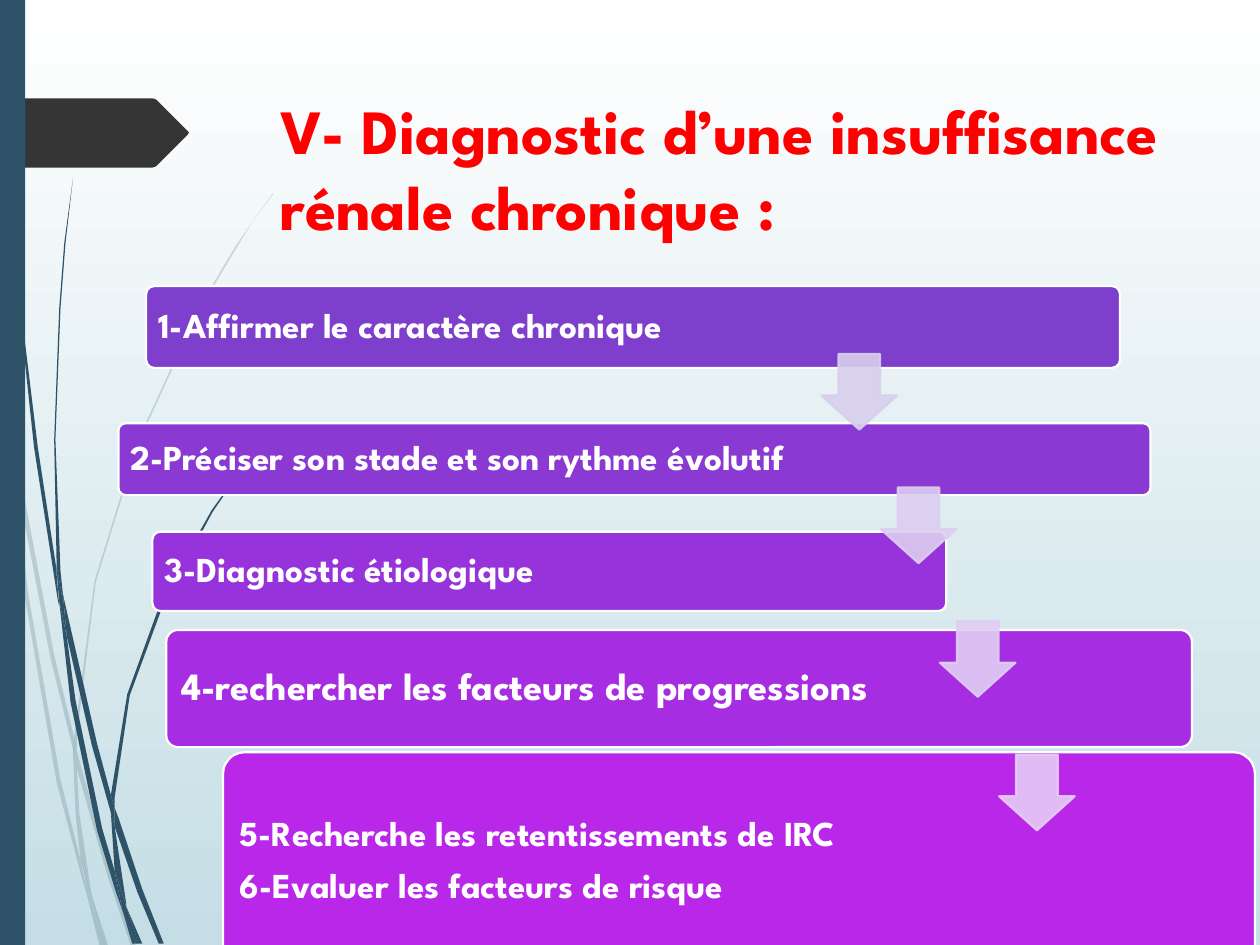
from lxml import etree
from pptx import Presentation
from pptx.dml.color import RGBColor
from pptx.enum.shapes import MSO_SHAPE
from pptx.enum.text import MSO_ANCHOR, MSO_AUTO_SIZE, PP_ALIGN
from pptx.oxml.ns import qn
from pptx.util import Inches, Pt

RECTANGLE = MSO_SHAPE.RECTANGLE
ROUNDED = MSO_SHAPE.ROUNDED_RECTANGLE
DOWN_ARROW = MSO_SHAPE.DOWN_ARROW
TOP, MIDDLE = MSO_ANCHOR.TOP, MSO_ANCHOR.MIDDLE
LEFT = PP_ALIGN.LEFT
NO_FIT = MSO_AUTO_SIZE.NONE

THEME = {
    "font": "League Spartan",
    "title": "FF0000",
    "title_size": 36,
    "text": "FFFFFF",
    "outline": "FFFFFF",
    "outline_width": 1.25,
    "accent": "2E5369",
    "tab": "353535",
    "sky": ["FFFFFF", "C5DEE5"],
    "arrows": ["D8CFEC", "DCCEF0", "E0CDF3", "E6CDF6"],
    "wisp_opacity": 20,
    "arrow_opacity": 90,
}

# Points in hundredths of an inch
PALE_WISPS = [
    [(8, 350), (6, 322), (0, 282), (0, 299), (7, 344)],
    [(40, 522), (59, 599), (59, 586), (43, 520), (10, 345), (12, 376)],
    [(64, 607), (61, 596), (61, 610), (85, 694), (104, 751), (108, 751), (88, 692)],
    [(83, 751), (86, 751), (73, 711)],
    [(64, 683), (48, 619), (22, 469), (12, 376), (8, 350), (19, 470), (45, 621),
     (64, 693), (70, 714), (69, 707)],
    [(58, 599), (60, 646), (64, 683), (67, 692), (73, 711), (72, 706), (63, 646),
     (61, 610), (61, 608)],
    [(61, 584), (76, 462), (111, 349), (159, 245), (187, 198), (201, 175), (217, 154),
     (217, 153), (201, 175), (186, 197), (158, 244), (110, 348), (75, 461), (59, 584),
     (59, 586), (61, 596)],
    [(70, 714), (79, 751), (82, 751)],
    [(61, 608), (61, 610), (61, 596), (59, 586), (58, 599)],
    [(67, 692), (65, 683), (69, 707), (70, 714), (82, 751), (83, 751), (73, 711)],
]
DARK_WISPS = [
    [(5, 110), (14, 233), (27, 355), (46, 477), (47, 481), (45, 457), (45, 453),
     (30, 355), (15, 232), (6, 109), (4, 48), (3, 0), (2, 0), (3, 48)],
    [(73, 592), (88, 645), (88, 633), (88, 631), (77, 590), (50, 472), (53, 505)],
    [(94, 649), (91, 641), (91, 656), (109, 708), (126, 749), (130, 749), (113, 706)],
    [(91, 691), (81, 657), (60, 556), (53, 505), (47, 477), (56, 557), (77, 659),
     (92, 708), (97, 722), (96, 717)],
    [(50, 472), (48, 453), (44, 349), (48, 245), (52, 193), (58, 141), (51, 193),
     (47, 245), (43, 349), (45, 449), (49, 472)],
    [(110, 749), (113, 749), (100, 719)],
    [(47, 477), (53, 505), (50, 472), (49, 472), (45, 449), (45, 453)],
    [(91, 633), (103, 552), (131, 476), (169, 406), (191, 374), (203, 359), (216, 344),
     (215, 344), (203, 358), (191, 373), (168, 405), (129, 474), (101, 551), (88, 631),
     (91, 641)],
    [(97, 722), (105, 749), (108, 749)],
    [(88, 645), (91, 691), (96, 706), (100, 719), (100, 716), (91, 656), (90, 651)],
    [(88, 645), (90, 651), (91, 656), (91, 641), (88, 631), (88, 633)],
    [(96, 706), (91, 691), (96, 717), (97, 722), (108, 749), (110, 749), (100, 719)],
]
TAB = [(149, 107), (124, 132), (121, 133), (0, 133), (0, 78), (121, 78), (124, 79),
       (149, 104), (150, 105)]
STEPS = [
    (1.16, 2.27, 7.73, 0.65, "7E40CC", 20, 0.08, ["1-Affirmer le caractère chronique"]),
    (0.94, 3.36, 8.19, 0.57, "8A3AD3", 20, 0.08, ["2-Préciser son stade et son rythme évolutif"]),
    (1.21, 4.22, 6.3, 0.63, "9733DB", 20, 0.08, ["3-Diagnostic étiologique"]),
    (1.32, 5, 8.14, 0.93, "A72DE2", 22, 0.09, ["4-rechercher les facteurs de progressions"]),
    (1.77, 5.97, 8.19, 1.73, "B927E9", 20, 0.08,
     ["5-Recherche les retentissements de IRC", "6-Evaluer les facteurs de risque"]),
]


def paint(shape, color, outline=None, opacity=100):
    shape.shadow.inherit = False
    shape.fill.solid()
    shape.fill.fore_color.rgb = RGBColor.from_string(color)
    if outline:
        shape.line.color.rgb = RGBColor.from_string(outline)
        shape.line.width = Pt(THEME["outline_width"])
    else:
        shape.line.fill.background()
    if opacity < 100:
        for tone in shape._element.spPr.iter(qn("a:srgbClr")):
            etree.SubElement(tone, qn("a:alpha"), val=str(opacity * 1000))


def write(para, text, size, color):
    para.alignment = LEFT
    span = para.add_run()
    span.text = text
    formats = {"name": THEME["font"], "size": Pt(size), "bold": True}
    for name, value in formats.items():
        setattr(span.font, name, value)
    span.font.color.rgb = RGBColor.from_string(color)


deck = Presentation()
deck.slide_width, deck.slide_height = Inches(10), Inches(7.5)
page = deck.slides.add_slide(deck.slide_layouts[5])
shapes = page.shapes

sky = page.background.fill
sky.gradient()
sky.gradient_angle = 270
for stop, color, position in zip(sky.gradient_stops, THEME["sky"], (0, 1)):
    stop.color.rgb = RGBColor.from_string(color)
    stop.position = position

outlines = [(points, THEME["accent"], THEME["wisp_opacity"]) for points in PALE_WISPS]
outlines += [(points, THEME["accent"], 100) for points in DARK_WISPS]
outlines.append((TAB, THEME["tab"], 100))
for points, color, opacity in outlines:
    builder = shapes.build_freeform(*points[0], scale=Inches(0.01))
    builder.add_line_segments(points[1:], close=True)
    paint(builder.convert_to_shape(), color, opacity=opacity)

side_band = shapes.add_shape(RECTANGLE, 0, 0, Inches(0.2), deck.slide_height)
paint(side_band, THEME["accent"])

for left, top, width, height, color, size, inset, lines in STEPS:
    bar = shapes.add_shape(ROUNDED, Inches(left), Inches(top), Inches(width), Inches(height))
    bar.adjustments[0] = 0.1
    paint(bar, color, THEME["outline"])
    frame = bar.text_frame
    frame.word_wrap = True
    frame.vertical_anchor = MIDDLE
    for side in ("left", "top", "right", "bottom"):
        setattr(frame, f"margin_{side}", Inches(inset))
    for index, line in enumerate(lines):
        para = frame.add_paragraph() if index else frame.paragraphs[0]
        para.line_spacing = 0.9
        para.space_after = Pt(8)
        write(para, line, size, THEME["text"])

for index, color in enumerate(THEME["arrows"]):
    arrow = shapes.add_shape(DOWN_ARROW, Inches(6.52 + 0.47 * index),
                             Inches(2.81 + 1.06 * index), Inches(0.6), Inches(0.6))
    arrow.adjustments[0] = 0.55
    arrow.adjustments[1] = 0.45
    paint(arrow, color, color, THEME["arrow_opacity"])

title = shapes.title
placement = {"left": 2.13, "top": 0.68, "width": 7.72, "height": 1.4}
for name, value in placement.items():
    setattr(title, name, Inches(value))
frame = title.text_frame
for name, value in {"word_wrap": True, "auto_size": NO_FIT, "vertical_anchor": TOP}.items():
    setattr(frame, name, value)
write(frame.paragraphs[0], "V- Diagnostic d’une insuffisance rénale chronique :",
      THEME["title_size"], THEME["title"])

deck.save("out.pptx")
